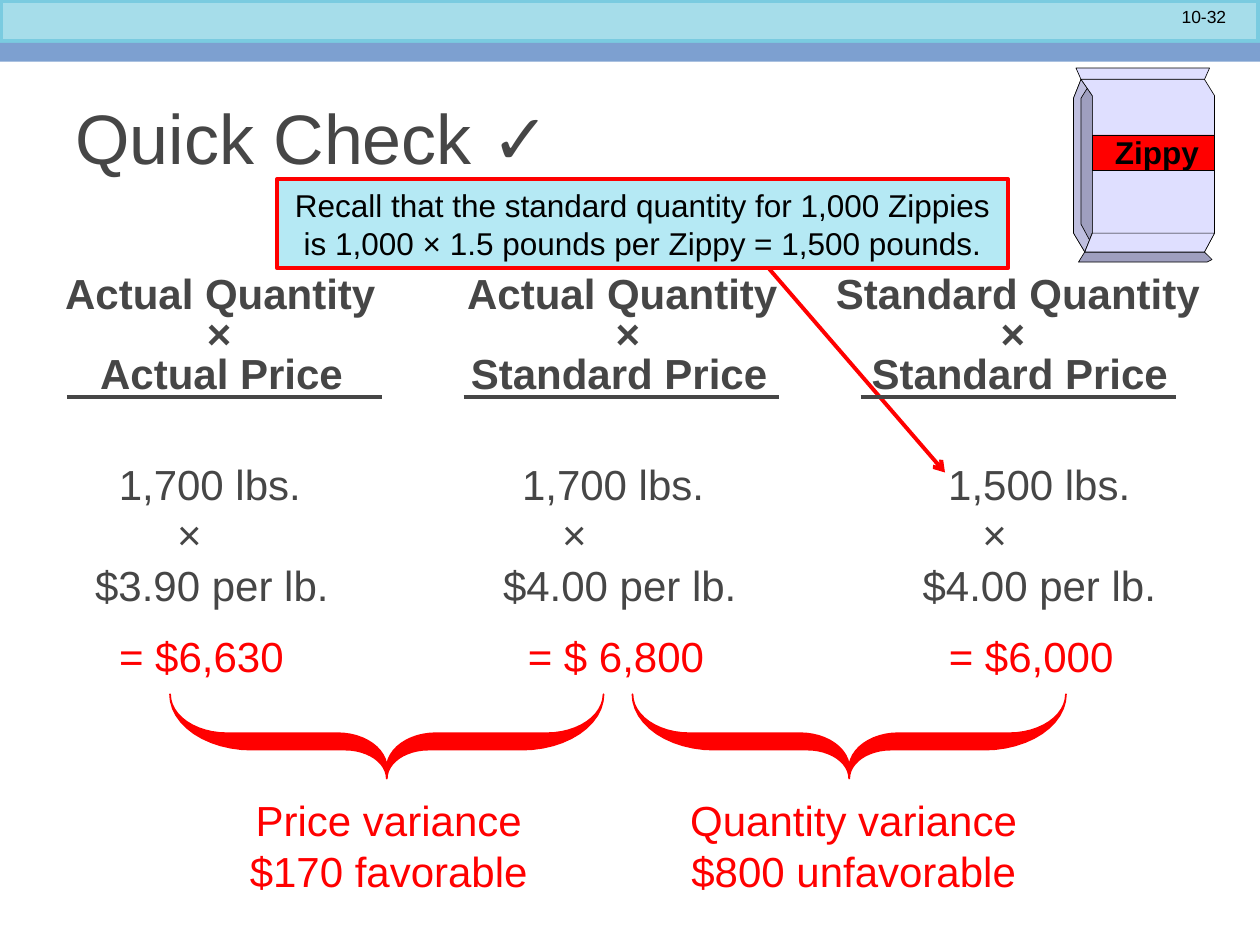
from math import cos, radians, sin
from lxml.etree import SubElement
from pptx import Presentation
from pptx.dml.color import RGBColor
from pptx.enum.shapes import MSO_CONNECTOR, MSO_SHAPE
from pptx.enum.text import MSO_ANCHOR, PP_ALIGN
from pptx.oxml.ns import qn
from pptx.util import Inches, Pt

THEME = {
    "font": "Arial", "ink": "464646", "black": "000000", "red": "FF0000",
    "band": "A6DDEA", "band_edge": "7ACBE0", "stripe": "7DA0D0", "callout": "B5E9F4",
    "bag_light": "DFDFFF", "bag_middle": "BFBFDF", "bag_dark": "9F9FBF",
    "title": 40, "body": 24, "label": 18, "number": 10,
    "thin": 0.38, "brace": 1, "rule": 2.25, "edge": 4,
}

presentation = Presentation()
presentation.slide_width = Inches(10)
presentation.slide_height = Inches(7.5)
slide = presentation.slides.add_slide(presentation.slide_layouts[6])
shapes = slide.shapes
column = presentation.slide_width // 100
row = presentation.slide_height // 75


def paint(shape, fill, line, width):
    shape.shadow.inherit = False
    shape.fill.solid()
    shape.fill.fore_color.rgb = RGBColor.from_string(THEME[fill])
    if line:
        shape.line.color.rgb = RGBColor.from_string(THEME[line])
        shape.line.width = Pt(THEME[width])
    else:
        shape.line.fill.background()


def write(box, lines, size, color, align=PP_ALIGN.LEFT, bold=False, anchor=MSO_ANCHOR.TOP):
    left, top, width, height = box
    shape = shapes.add_textbox(left * column, top * row, width * column, height * row)
    text_frame = shape.text_frame
    text_frame.word_wrap = True
    text_frame.vertical_anchor = anchor
    text_frame.text = "\n".join(lines)
    for paragraph in text_frame.paragraphs:
        paragraph.alignment = align
        for run in paragraph.runs:
            run.font.name = THEME["font"]
            run.font.size = Pt(THEME[size])
            run.font.bold = bold
            run.font.color.rgb = RGBColor.from_string(THEME[color])
    return text_frame


bag_outlines = [
    ("bag_dark", [(85.8, 6.3), (85.2, 7.8), (85.2, 18.5), (86.1, 20), (86.7, 18.5), (86.7, 7.6)]),
    ("bag_middle", [(85.8, 6.3), (86.3, 7), (85.8, 7.8), (85.8, 17.8), (86.5, 19.1),
                    (86.1, 20), (85.2, 18.5), (85.2, 7.8)]),
    ("bag_light", [(85.8, 6.3), (85.4, 5.4), (96, 5.4), (95.6, 6.3)]),
    ("bag_dark", [(86.1, 20), (95.6, 20), (96.2, 20.6), (95.8, 20.8), (85.6, 20.8)]),
    ("bag_light", [(86.1, 20), (95.6, 20), (96.4, 18.5), (96.4, 7.6), (95.6, 6.3),
                   (85.8, 6.3), (86.7, 7.6), (86.7, 18.5)]),
    ("bag_light", [(86.7, 18.5), (86.1, 20), (95.6, 20), (96.4, 18.5)]),
]
brace_arcs = [
    (-3.9, 5.9, 3.9, 2.8, 0, -90),
    (-12.7, 0, 4.5, 3.1, 90, 180),
    (-10.7, 0, 6.5, 4.4, 180, 90),
    (-3.3, 6.7, 3.3, 2.3, -90, 0),
]
brace_half = []
for center_x, center_y, radius_x, radius_y, start, end in brace_arcs:
    for step in range(13):
        angle = radians(start + (end - start) * step / 12)
        brace_half.append((center_x + radius_x * cos(angle), center_y + radius_y * sin(angle)))
brace = brace_half + [(-x, y) for x, y in reversed(brace_half)]

outlines = [(fill, "black", "thin", points) for fill, points in bag_outlines]
for center in (30.7, 67.4):
    outlines.append(("red", "red", "brace", [(center + x, 55.1 + y) for x, y in brace]))
for fill, line, width, points in outlines:
    corners = [(round(x * column), round(y * row)) for x, y in points]
    builder = shapes.build_freeform(*corners[0])
    builder.add_line_segments(corners[1:], close=True)
    paint(builder.convert_to_shape(), fill, line, width)

connectors = [(59.2, 19.2, 75, 37.5, "red")]
for index in range(3):
    left = 5.3 + 31.5 * index
    connectors.append((left, 31.5, left + 25, 31.5, "ink"))
for left, top, right, bottom, color in connectors:
    connector = shapes.add_connector(
        MSO_CONNECTOR.STRAIGHT, round(left * column), round(top * row),
        round(right * column), round(bottom * row))
    connector.line.color.rgb = RGBColor.from_string(THEME[color])
    connector.line.width = Pt(THEME["rule"])
    if color == "red":
        SubElement(connector.line._get_or_add_ln(), qn("a:tailEnd"), type="arrow")
    SubElement(connector._element.spPr, qn("a:effectLst"))

for left, top, width, height, fill, line, weight in [
    (0, 0, 100, 3.4, "band", "band_edge", "edge"),
    (0, 4, 100, 0.9, "stripe", None, None),
    (0, 3.4, 100, 1, "stripe", None, None),
    (86.7, 10.7, 9.7, 2.8, "red", "black", "thin"),
    (22, 14.2, 58, 7.1, "callout", "red", "rule"),
]:
    rectangle = shapes.add_shape(
        MSO_SHAPE.RECTANGLE, round(left * column), round(top * row),
        round(width * column), round(height * row))
    paint(rectangle, fill, line, weight)

write((85, 0, 13.3, 2.7), ["10-32"], "number", "black", PP_ALIGN.RIGHT)
write((87.5, 10.1, 10.8, 4), ["Zippy"], "label", "black", bold=True)
write((5, 5, 90, 11.7), ["Quick Check ✓"], "title", "ink", anchor=MSO_ANCHOR.MIDDLE)
write((22, 14.2, 58, 7.1), [
    "Recall that the standard quantity for 1,000 Zippies",
    "is 1,000 × 1.5 pounds per Zippy = 1,500 pounds.",
], "label", "black", PP_ALIGN.CENTER, anchor=MSO_ANCHOR.MIDDLE)
write((9.6, 62.6, 42.5, 9.1), ["Price variance", "$170 favorable"],
      "body", "red", PP_ALIGN.CENTER)
write((46.5, 62.6, 42.5, 9.1), ["Quantity variance", "$800 unfavorable"],
      "body", "red", PP_ALIGN.CENTER)

headings = [
    (("Actual Quantity", "Actual Quantity", "Standard Quantity"), (17.5, 49.4, 80.8)),
    (("×", "×", "×"), (17.4, 49.85, 80.4)),
    (("Actual Price", "Standard Price", "Standard Price"), (17.6, 49.15, 80.95)),
]
amounts = [
    (("1,700 lbs.", "1,700 lbs.", "1,500 lbs."), (16.67, 48.67, 82.5)),
    (("×", "×", "×"), (15.05, 45.6, 78.95)),
    (("$3.90 per lb.", "$4.00 per lb.", "$4.00 per lb."), (16.83, 49.2, 82.5)),
    (("= $6,630", "= $ 6,800", "= $6,000"), (16, 48.9, 81.85)),
]
for box, entries, bold, spacing in [
    ((2.9, 35.9, 94.1, 19.1), amounts, False, 1),
    ((2.5, 21.5, 95.8, 10.7), headings, True, 0.8),
]:
    lines = ["\t" + "\t".join(words) for words, centers in entries]
    text_frame = write(box, lines, "body", "ink", bold=bold)
    for paragraph, (words, centers) in zip(text_frame.paragraphs, entries):
        paragraph.line_spacing = spacing
        if words[0].startswith("="):
            paragraph.space_before = Pt(THEME["body"] / 2)
            for run in paragraph.runs:
                run.font.color.rgb = RGBColor.from_string(THEME["red"])
        tab_list = SubElement(paragraph._p.get_or_add_pPr(), qn("a:tabLst"))
        for center in centers:
            position = round((center - box[0]) * column) - text_frame.margin_left
            SubElement(tab_list, qn("a:tab"), pos=str(position), algn="ctr")

presentation.save("out.pptx")
